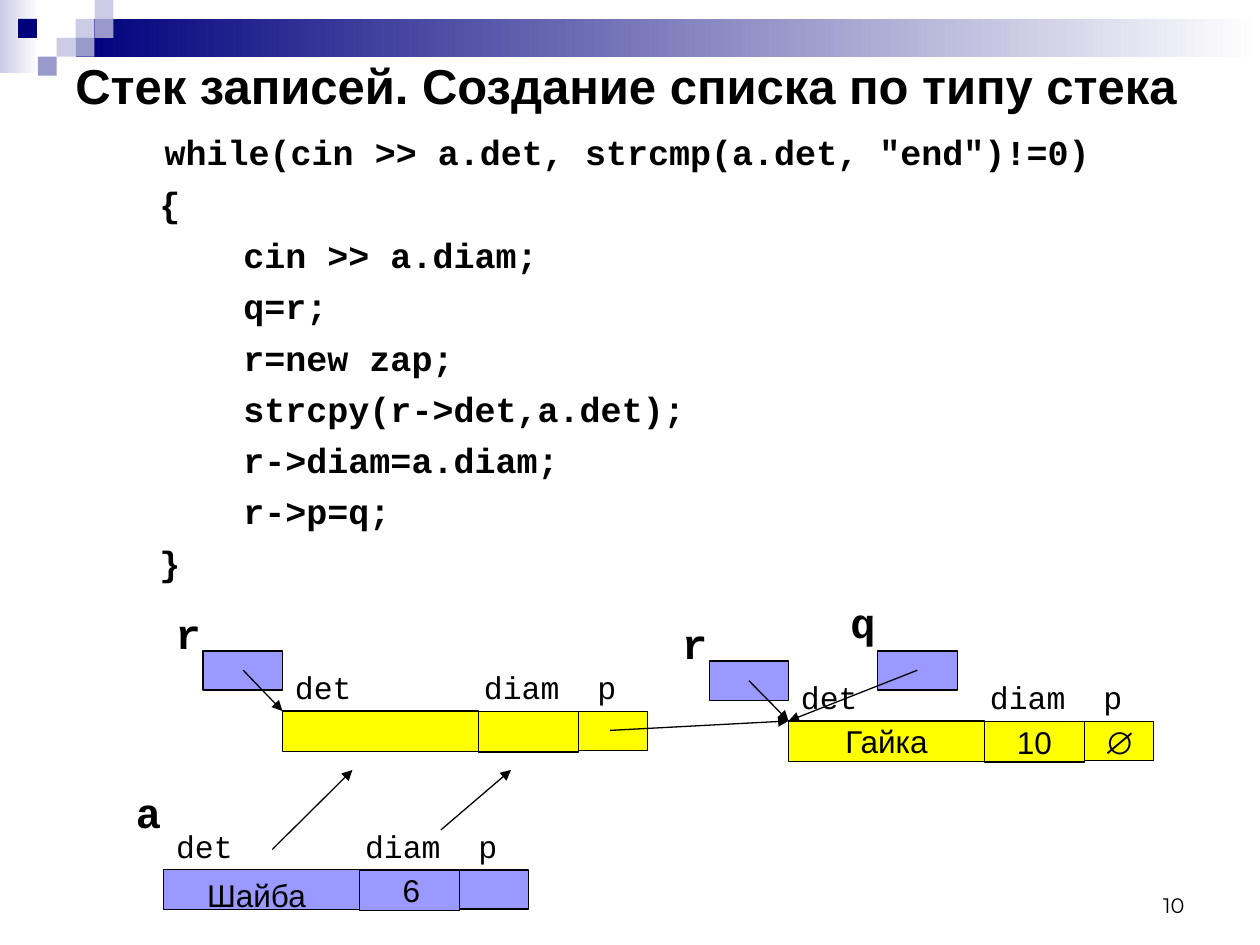
from dataclasses import dataclass
from lxml.etree import SubElement as Sub
from pptx import Presentation as Deck
from pptx.dml.color import RGBColor as Rgb
from pptx.enum.shapes import MSO_CONNECTOR as Link, MSO_SHAPE as Form
from pptx.enum.text import MSO_ANCHOR as Anchor, PP_ALIGN as Align
from pptx.oxml.ns import qn
from pptx.util import Pt


@dataclass(frozen=True)
class Theme:
    ink: str = "000000"
    white: str = "FFFFFF"
    navy: str = "00007D"
    pale: str = "CCCCE6"
    mid: str = "9999CC"
    blue: str = "9999FF"
    gold: str = "FFFF00"
    sans: str = "Arial"
    mono: str = "Courier New"
    round: str = "Montserrat"
    head: float = 28
    name: float = 24
    code: float = 20
    text: float = 18
    foot: float = 12


@dataclass(frozen=True)
class Box:
    x: float
    y: float
    w: float
    h: float


@dataclass(frozen=True)
class Style:
    font: str
    size: float
    bold: bool = False
    align: Align = Align.LEFT
    anchor: Anchor = Anchor.TOP
    wrap: bool = True


@dataclass(frozen=True)
class Node:
    x: float
    y: float
    fill: str
    texts: tuple = ("", "", "")


@dataclass(frozen=True)
class Ref:
    x: float
    y: float
    name: str
    rise: float


T = Theme()
TITLE = Style(T.sans, T.head, True, anchor=Anchor.MIDDLE)
CODE = Style(T.mono, T.code, True)
NAME = Style(T.mono, T.name, True, wrap=False)
FIELD = Style(T.mono, T.text)
VALUE = Style(T.sans, T.text, align=Align.CENTER, anchor=Anchor.MIDDLE, wrap=False)
NULL = Style(T.sans, T.text, True, Align.CENTER, Anchor.MIDDLE, False)
LOOSE = Style(T.sans, T.text, align=Align.CENTER)
PAGE = Style(T.round, T.foot, align=Align.RIGHT, anchor=Anchor.BOTTOM)

TILE = 10.8
TILES = (
    (43.2, 10.8, T.pale), (54, 0, T.pale), (54, 10.8, T.mid),
    (32.4, 21.6, T.pale), (21.6, 32.4, T.mid), (32.4, 21.6, T.pale),
    (43.2, 21.6, T.mid), (21.6, 32.4, T.mid), (10.3, 10.8, T.navy),
)
BARS = (
    (Box(0, 0, 22.3, 41.8), T.pale),
    (Box(43.2, 10.8, 684 + 3.6, 21.6), T.navy),
)
LINES = (
    (51, 'while(cin >> a.det, strcmp(a.det, "end")!=0)'),
    (48, "{"),
    (96, "cin >> a.diam;"),
    (96, "q=r;"),
    (96, "r=new zap;"),
    (96, "strcpy(r->det,a.det);"),
    (96, "r->diam=a.diam;"),
    (96, "r->p=q;"),
    (48, "}"),
)
CELLS = ((112, 0, 23), (57, 0.4, 23), (39.5, 0.4, 22.3))
STOPS = (108, 172.8)
NODES = (
    Node(93.5, 496.8, T.blue),
    Node(161.4, 406.3, T.gold),
    Node(450.6, 412, T.gold, ("Гайка", "10", "")),
)
REFS = (
    Ref(116, 372, "r", 28.6),
    Ref(405.4, 377.8, "r", 28.6),
    Ref(501.6, 372, "q", 34.5),
)
ARROWS = (
    (139, 383, 161.4, 406.3),
    (428, 389, 450.6, 412),
    (524.2, 383, 450.6, 412),
    (348.5, 417.4, 450.6, 412),
    (155.6, 485.4, 201.4, 440),
    (252, 474.2, 292, 440),
)


def write(shape, text: str, style: Style) -> None:
    frame = shape.text_frame
    frame.word_wrap = style.wrap
    frame.vertical_anchor = style.anchor
    frame.text = text
    for par in frame.paragraphs:
        par.alignment = style.align
        for run in par.runs:
            run.font.name = style.font
            run.font.size = Pt(style.size)
            run.font.bold = style.bold
            run.font.color.rgb = Rgb.from_string(T.ink)


def label(slide, box: Box, text: str, style: Style):
    shape = slide.shapes.add_textbox(Pt(box.x), Pt(box.y), Pt(box.w), Pt(box.h))
    write(shape, text, style)
    return shape


def block(slide, box: Box, fill: str, edge: bool = False):
    shape = slide.shapes.add_shape(
        Form.RECTANGLE, Pt(box.x), Pt(box.y), Pt(box.w), Pt(box.h))
    shape.shadow.inherit = False
    shape.fill.solid()
    shape.fill.fore_color.rgb = Rgb.from_string(fill)
    if edge:
        shape.line.color.rgb = Rgb.from_string(T.ink)
        shape.line.width = Pt(0.75)
    else:
        shape.line.fill.background()
    return shape


def fade(slide, box: Box, tone: str) -> None:
    fill = block(slide, box, tone).fill
    fill.gradient()
    fill.gradient_angle = 0
    for stop, hue, place in zip(fill.gradient_stops, (tone, T.white), (0, 1)):
        stop.color.rgb = Rgb.from_string(hue)
        stop.position = place


def arrow(slide, x: float, y: float, to_x: float, to_y: float) -> None:
    line = slide.shapes.add_connector(
        Link.STRAIGHT, Pt(x), Pt(y), Pt(to_x), Pt(to_y))
    line.line.color.rgb = Rgb.from_string(T.ink)
    line.line.width = Pt(0.75)
    Sub(line.line._get_or_add_ln(), qn("a:tailEnd"), type="triangle")
    Sub(line._element.spPr, qn("a:effectLst"))


def record(slide, node: Node) -> None:
    x = node.x
    for (wide, drop, high), text in zip(CELLS, node.texts):
        cell = block(slide, Box(x, node.y + drop, wide, high), node.fill, True)
        if text:
            write(cell, text, VALUE)
        x += wide
    shape = label(slide, Box(node.x, node.y - 28, 209.5, 28.8), "det\tdiam\tp", FIELD)
    tabs = Sub(shape.text_frame.paragraphs[0]._p.get_or_add_pPr(), qn("a:tabLst"))
    for stop in STOPS:
        Sub(tabs, qn("a:tab"), pos=str(int(Pt(stop))), algn="l")


def pointer(slide, ref: Ref) -> None:
    block(slide, Box(ref.x, ref.y, 45.4, 22.4), T.blue, True)
    label(slide, Box(ref.x - 22.7, ref.y - ref.rise, 28.8, 36), ref.name, NAME)


def main() -> None:
    deck = Deck()
    deck.slide_width, deck.slide_height = Pt(720), Pt(540)
    slide = deck.slides.add_slide(deck.slide_layouts[6])
    for box, tone in BARS:
        fade(slide, Box(box.x, box.y, min(box.w, 720 - box.x), box.h), tone)
    for x, y, tone in dict.fromkeys(TILES):
        block(slide, Box(x, y, TILE, TILE), tone)
    label(slide, Box(36, 31.7, 648, 33.8), "Стек записей. Создание списка по типу стека", TITLE)
    code = label(slide, Box(36, 71.3, 648, 244), "\n".join(t for _, t in LINES), CODE)
    for par, (dent, _) in zip(code.text_frame.paragraphs, LINES):
        par.space_before = Pt(5.3)
        par._p.get_or_add_pPr().set("marL", str(int(Pt(dent))))
    for node in NODES:
        record(slide, node)
    for ref in REFS:
        pointer(slide, ref)
    label(slide, Box(70.6, 445.7, 28.8, 36), "a", NAME)
    for ends in ARROWS:
        arrow(slide, *ends)
    write(block(slide, Box(628.6, 415.4, 22.3, 17.3), T.gold), "∅", NULL)
    label(slide, Box(110.9, 496.8, 71.3, 28.8), "Шайба", LOOSE)
    label(slide, Box(206.6, 496.8, 57, 23), "6", VALUE)
    label(slide, Box(516.2, 491.8, 167.8, 36), "10", PAGE)
    deck.save("out.pptx")


if __name__ == "__main__":
    main()
